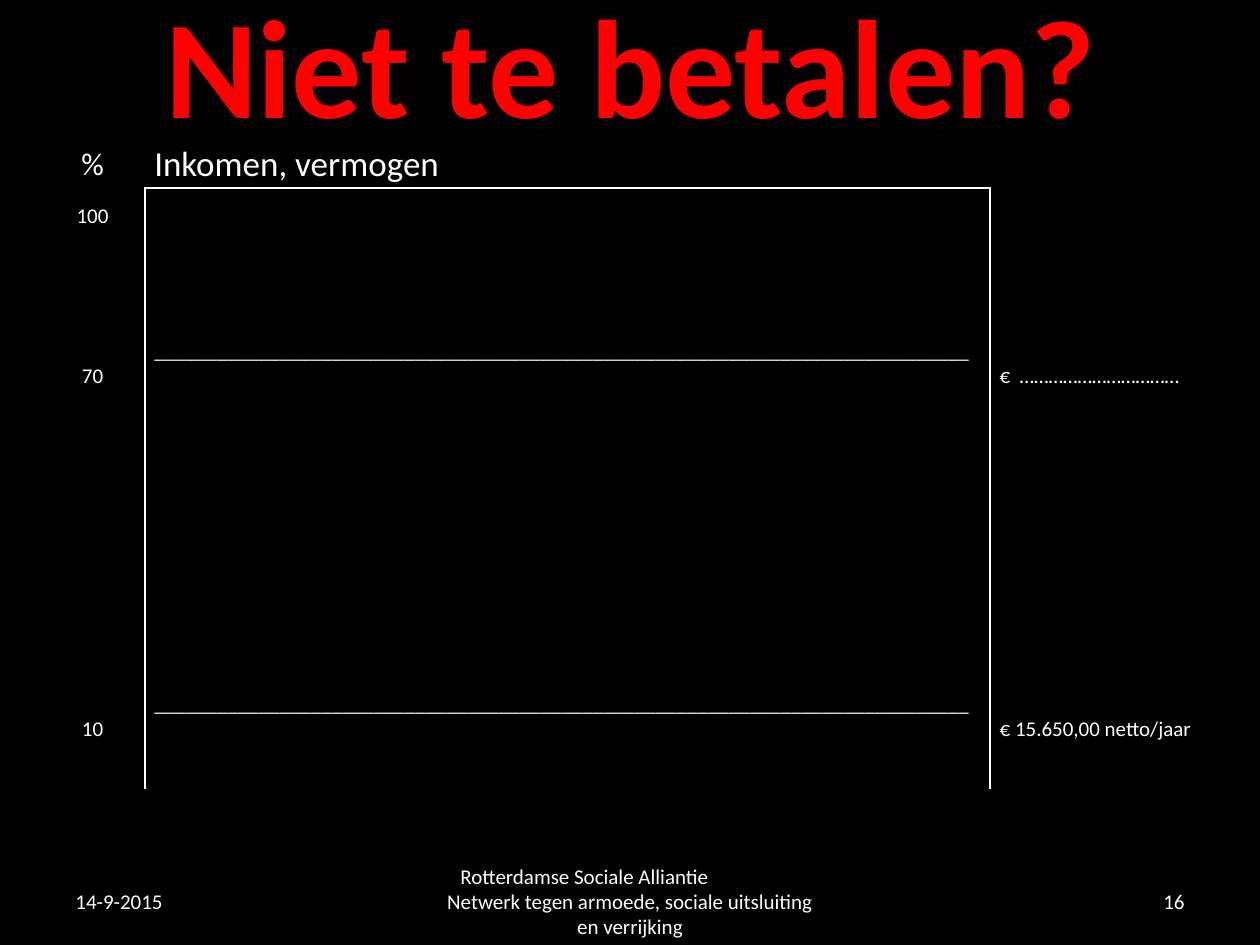
from dataclasses import dataclass

from lxml.etree import SubElement
from pptx import Presentation
from pptx.dml.color import RGBColor
from pptx.enum.text import MSO_ANCHOR, PP_ALIGN
from pptx.oxml.ns import qn
from pptx.util import Pt


@dataclass(frozen=True)
class Theme:
    font: str = "Calibri"
    black: str = "000000"
    white: str = "FFFFFF"
    red: str = "FF0000"
    title: int = 80
    heading: int = 20
    unit: int = 18
    body: int = 12
    rule: float = 1


@dataclass(frozen=True)
class Box:
    left: float
    top: float
    width: float
    height: float

    def lengths(self):
        return [Pt(v) for v in (self.left, self.top, self.width, self.height)]


THEME = Theme()
RULE_TEXT = "_" * 78
COLUMN_WIDTHS = (59.8, 483.1, 130.3)
ROW_HEIGHTS = (30.4,) * 10 + (70,)
LAST_ROW = len(ROW_HEIGHTS) - 1


def write(frame, text, first=True, size=THEME.body, color=THEME.white, bold=False,
          align=PP_ALIGN.LEFT, line_spacing=None, space_before=0, indent=0):
    para = frame.paragraphs[0] if first else frame.add_paragraph()
    para.alignment = align
    para.space_before = Pt(space_before)
    if line_spacing:
        para.line_spacing = line_spacing
    if indent:
        properties = para._p.get_or_add_pPr()
        properties.set("marL", str(Pt(indent)))
        properties.set("indent", "0")
    span = para.add_run()
    span.text = text
    span.font.name = THEME.font
    span.font.size = Pt(size)
    span.font.bold = bold
    span.font.color.rgb = RGBColor.from_string(color)


def add_text_frame(page, box):
    frame = page.shapes.add_textbox(*box.lengths()).text_frame
    frame.word_wrap = True
    frame.vertical_anchor = MSO_ANCHOR.MIDDLE
    return frame


def set_borders(cell, sides):
    properties = cell._tc.get_or_add_tcPr()
    for side in "LRTB":
        line = SubElement(properties, qn(f"a:ln{side}"), w=str(Pt(THEME.rule)))
        if side in sides:
            fill = SubElement(line, qn("a:solidFill"))
            SubElement(fill, qn("a:srgbClr"), val=THEME.white)
        else:
            SubElement(line, qn("a:noFill"))


def border_sides(row, column):
    sides = ""
    if row > 0:
        sides += ("R", "LR", "L")[column]
    if column == 1:
        sides += {0: "B", 1: "T", LAST_ROW: "B"}.get(row, "")
    return sides


def write_cell(cell, text, anchor=MSO_ANCHOR.MIDDLE, top=0, **style):
    cell.vertical_anchor = anchor
    cell.margin_left = cell.margin_right = Pt(5.4)
    cell.margin_top, cell.margin_bottom = Pt(top), 0
    write(cell.text_frame, text, line_spacing=1.15, **style)


def add_title(page, box):
    write(add_text_frame(page, box), "Niet te betalen?", size=THEME.title,
          color=THEME.red, bold=True, align=PP_ALIGN.CENTER)


def add_income_table(page, box):
    table = page.shapes.add_table(
        len(ROW_HEIGHTS), len(COLUMN_WIDTHS), *box.lengths()).table
    table.first_row = table.horz_banding = False
    for column, width in zip(table.columns, COLUMN_WIDTHS):
        column.width = Pt(width)
    for row, height in zip(table.rows, ROW_HEIGHTS):
        row.height = Pt(height)
    for row in range(len(ROW_HEIGHTS)):
        for column in range(len(COLUMN_WIDTHS)):
            cell = table.cell(row, column)
            set_borders(cell, border_sides(row, column))
            cell.fill.background()
    field = table.cell(1, 1)
    field.merge(table.cell(LAST_ROW, 1))

    write_cell(table.cell(0, 0), "%", size=THEME.unit, align=PP_ALIGN.CENTER)
    write_cell(table.cell(0, 1), "Inkomen, vermogen", size=THEME.heading)
    for row, percentage in ((1, "100"), (4, "70"), (LAST_ROW, "10")):
        write_cell(table.cell(row, 0), percentage, align=PP_ALIGN.CENTER)
    for row, amount in ((4, "€  ……………………………"), (LAST_ROW, "€ 15.650,00 netto/jaar")):
        write_cell(table.cell(row, 2), amount)
    write_cell(field, RULE_TEXT, anchor=MSO_ANCHOR.TOP, top=84)
    write(field.text_frame, RULE_TEXT, first=False, line_spacing=1.15, space_before=185)


def add_footer(page, box):
    side_width, center_width = 168, 228
    right = box.left + box.width
    center = box.left + (box.width - center_width) / 2
    date = add_text_frame(page, Box(box.left, box.top, side_width, box.height))
    write(date, "14-9-2015")
    sender = add_text_frame(page, Box(center, box.top, center_width, box.height))
    write(sender, "Rotterdamse Sociale Alliantie", indent=10)
    write(sender, "Netwerk tegen armoede, sociale uitsluiting en verrijking",
          first=False, align=PP_ALIGN.CENTER)
    number = add_text_frame(page, Box(right - side_width, box.top, side_width, box.height))
    write(number, "16", align=PP_ALIGN.RIGHT)


def main():
    deck = Presentation()
    deck.slide_width, deck.slide_height = Pt(720), Pt(540)
    page = deck.slides.add_slide(deck.slide_layouts[6])
    page.background.fill.solid()
    page.background.fill.fore_color.rgb = RGBColor.from_string(THEME.black)
    add_title(page, Box(36.5, 0, 648, 71))
    add_income_table(page, Box(23, 77, sum(COLUMN_WIDTHS), sum(ROW_HEIGHTS)))
    add_footer(page, Box(36, 500.5, 648, 28.75))
    deck.save("out.pptx")


if __name__ == "__main__":
    main()
